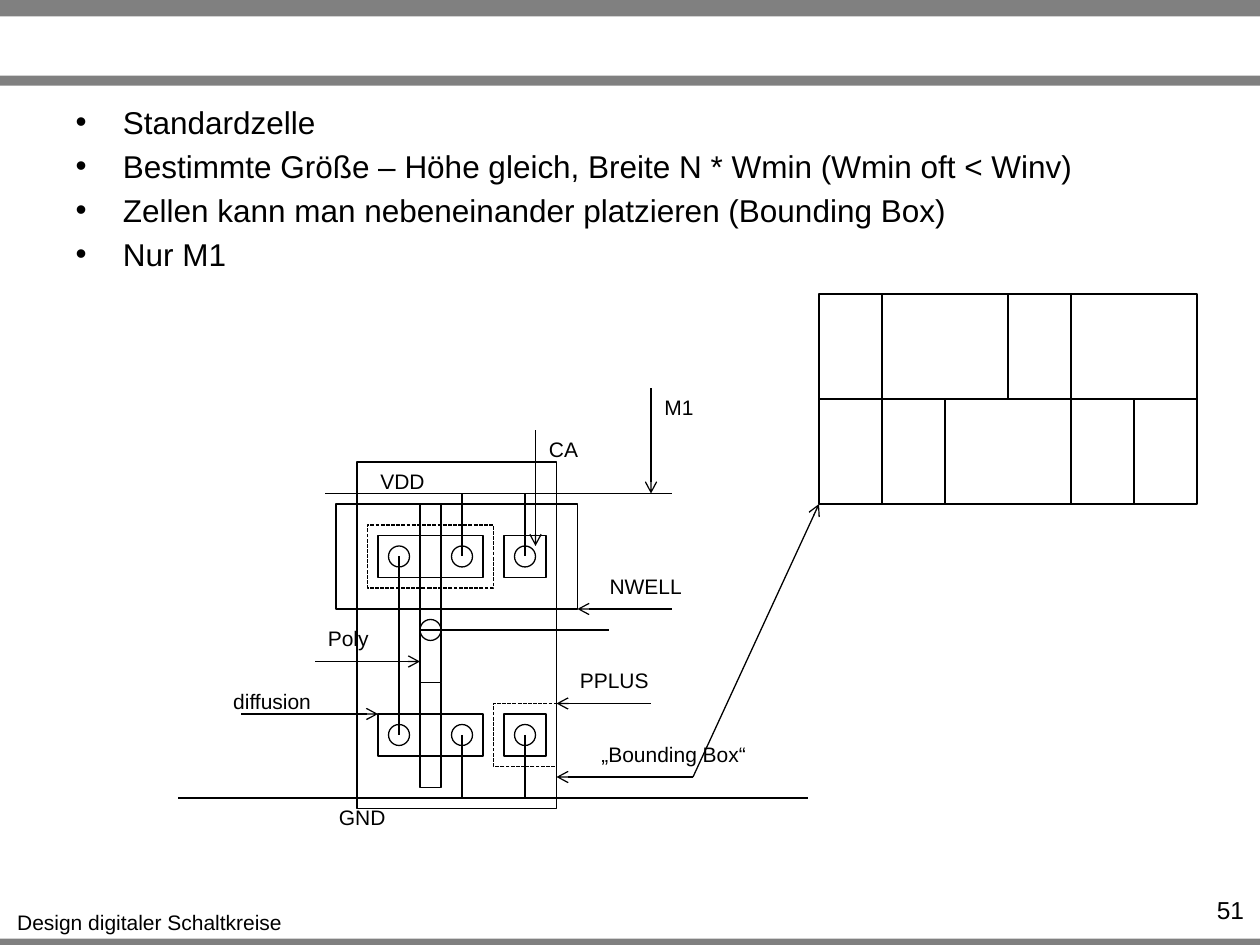
from lxml.etree import SubElement
from pptx import Presentation
from pptx.dml.color import RGBColor
from pptx.enum.dml import MSO_LINE
from pptx.enum.shapes import MSO_CONNECTOR, MSO_SHAPE
from pptx.enum.text import MSO_AUTO_SIZE, PP_ALIGN
from pptx.oxml.ns import qn
from pptx.util import Pt

BLACK, GREY = "000000", "808080"
CONTACT = 12
NMOS_OFFSET = 102  # distance from the PMOS row down to the NMOS row

BULLETS = [
    "Standardzelle",
    "Bestimmte Größe – Höhe gleich, Breite N * Wmin (Wmin oft < Winv)",
    "Zellen kann man nebeneinander platzieren (Bounding Box)",
    "Nur M1",
]
BARS = [(0, 9.4), (43.2, 5.8), (536.4, 5.8)]  # top, height
WIRES = [  # x1, y1, x2, y2
    (264, 282, 384, 282), (306, 282, 186, 282),  # VDD rail
    (258, 456, 462, 456), (312, 456, 102, 456),  # GND rail
    (264, 282, 264, 318), (300, 282, 300, 318),
    (264, 420, 264, 456), (300, 420, 300, 456),
    (228, 318, 228, 420),  # output
    (240, 360, 348, 360),  # input
]
POINTERS = [
    (138, 408, 216, 408),  # diffusion
    (372, 402, 318, 402),  # PPLUS
    (384, 348, 330, 348),  # NWELL
    (306, 246, 306, 312),  # CA
    (372, 222, 372, 282),  # M1
    (180, 378, 240, 378),  # Poly
    (396, 444, 318, 444),  # bounding box of the cell
    (396, 444, 468, 288),  # bounding box in the cell rows
]
LABELS = [  # text, left, top, width
    ("VDD", 210, 264, 40), ("GND", 186, 456, 42),
    ("diffusion", 126, 390, 59), ("PPLUS", 324, 378, 54),
    ("NWELL", 341, 324, 56), ("CA", 306, 246, 32),
    ("M1", 372, 222, 32), ("Poly", 180, 354, 38),
    ("„Bounding Box“", 336, 420, 98),
    ("Design digitaler Schaltkreise", 2, 516, 167),
]
CELL_ROWS = [(168, [1, 2, 1, 2]), (228, [1, 1, 2, 1, 1])]  # top, widths in Wmin


def colour(hex_value):
    return RGBColor.from_string(hex_value)


def add_run(paragraph, text, size):
    run = paragraph.add_run()
    run.text = text
    run.font.size = Pt(size)
    run.font.name = "Arial"
    run.font.color.rgb = colour(BLACK)


def add_bar(slide, top, height):
    bar = slide.shapes.add_shape(MSO_SHAPE.RECTANGLE, 0, Pt(top), Pt(720), Pt(height))
    bar.shadow.inherit = False
    bar.fill.solid()
    bar.fill.fore_color.rgb = colour(GREY)
    bar.line.fill.background()


def add_outline(slide, left, top, width, height, kind=MSO_SHAPE.RECTANGLE, dashed=False):
    outline = slide.shapes.add_shape(kind, Pt(left), Pt(top), Pt(width), Pt(height))
    outline.shadow.inherit = False
    outline.fill.background()
    outline.line.color.rgb = colour(BLACK)
    outline.line.width = Pt(0.75)
    if dashed:
        outline.line.dash_style = MSO_LINE.SQUARE_DOT


def add_contact(slide, left, top):
    add_outline(slide, left, top, CONTACT, CONTACT, MSO_SHAPE.OVAL)


def add_wire(slide, x1, y1, x2, y2, arrow=False):
    wire = slide.shapes.add_connector(
        MSO_CONNECTOR.STRAIGHT, Pt(x1), Pt(y1), Pt(x2), Pt(y2))
    wire.line.color.rgb = colour(BLACK)
    wire.line.width = Pt(0.75)
    if arrow:
        SubElement(wire.line._get_or_add_ln(), qn("a:tailEnd"), type="arrow")
    SubElement(wire._element.spPr, qn("a:effectLst"))


def add_label(slide, text, left, top, width, height=21.6, size=12, align=PP_ALIGN.CENTER):
    label = slide.shapes.add_textbox(Pt(left), Pt(top), Pt(width), Pt(height))
    label.text_frame.word_wrap = False
    paragraph = label.text_frame.paragraphs[0]
    paragraph.alignment = align
    add_run(paragraph, text, size)


def fill_bullets(body):
    body.left, body.top, body.width, body.height = Pt(36), Pt(55), Pt(648), Pt(48)
    frame = body.text_frame
    frame.auto_size = MSO_AUTO_SIZE.NONE
    for index, text in enumerate(BULLETS):
        paragraph = frame.add_paragraph() if index else frame.paragraphs[0]
        properties = paragraph._p.get_or_add_pPr()
        properties.set("marL", str(Pt(27)))
        properties.set("indent", str(Pt(-27)))
        add_run(paragraph, text, 18)


def add_transistor_row(slide, offset):
    """Transistor with gate and contacts, and the well or substrate tap beside it."""
    add_outline(slide, 216, 306 + offset, 60, 24)
    add_outline(slide, 240, 288 + offset, 12, 60)
    add_outline(slide, 288, 306 + offset, 24, 24)
    for left in (222, 258, 294):
        add_contact(slide, left, 312 + offset)


def add_inverter(slide):
    for offset in (0, NMOS_OFFSET):
        add_transistor_row(slide, offset)
    add_outline(slide, 240, 348, 12, 42)  # poly between the gates
    add_contact(slide, 240, 354)
    add_outline(slide, 210, 300, 72, 36, dashed=True)  # PPLUS of the PMOS
    add_outline(slide, 282, 402, 36, 36, dashed=True)  # PPLUS of the tap
    add_outline(slide, 192, 288, 138, 60)  # NWELL
    add_outline(slide, 204, 264, 114, 198)  # bounding box


def add_cell_rows(slide):
    for top, widths in CELL_ROWS:
        left = 468
        for width in widths:
            add_outline(slide, left, top, 36 * width, 60)
            left += 36 * width


def main():
    deck = Presentation()
    deck.slide_width, deck.slide_height = Pt(720), Pt(540)
    slide = deck.slides.add_slide(deck.slide_layouts[1])
    title = slide.shapes.title._element
    title.getparent().remove(title)
    fill_bullets(slide.placeholders[1])
    for bar in BARS:
        add_bar(slide, *bar)
    add_inverter(slide)
    add_cell_rows(slide)
    for wire in WIRES:
        add_wire(slide, *wire)
    for pointer in POINTERS:
        add_wire(slide, *pointer, arrow=True)
    for label in LABELS:
        add_label(slide, *label)
    add_label(slide, "51", 655, 508, 63, 17, 14, PP_ALIGN.RIGHT)
    deck.save("out.pptx")


if __name__ == "__main__":
    main()
